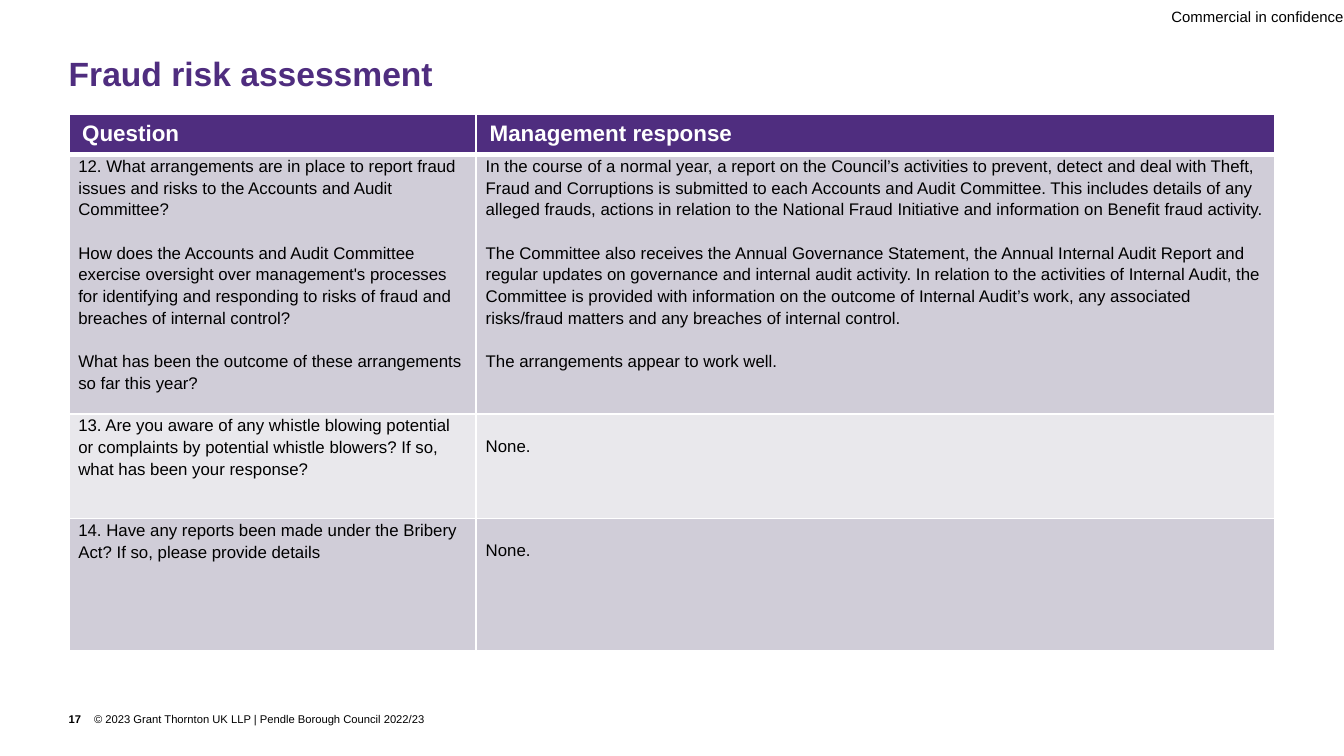
from lxml import etree
from pptx import Presentation
from pptx import util as u
from pptx.dml.color import RGBColor
from pptx.enum import text
from pptx.oxml import ns

PURPLE = RGBColor(0x4F, 0x2D, 0x7F)
MAUVE = RGBColor(0xD0, 0xCD, 0xD8)
PALE = RGBColor(0xE9, 0xE8, 0xEC)
WHITE = RGBColor(0xFF, 0xFF, 0xFF)
BLACK = RGBColor(0, 0, 0)

HEADINGS = ["Question", "Management response"]
# Each row: height in cm, question paragraphs, response paragraphs, top inset of the response
ROWS = [
    (4.9, [
        "12. What arrangements are in place to report fraud issues and risks to the Accounts and Audit Committee?",
        "How does the Accounts and Audit Committee exercise oversight over management's processes for "
        "identifying and responding to risks of fraud and breaches of internal control?",
        "What has been the outcome of these arrangements so far this year?",
    ], [
        "In the course of a normal year, a report on the Council’s activities to prevent, detect and deal with "
        "Theft, Fraud and Corruptions is submitted to each Accounts and Audit Committee. This includes details of "
        "any alleged frauds, actions in relation to the National Fraud Initiative and information on Benefit "
        "fraud activity.",
        "The Committee also receives the Annual Governance Statement, the Annual Internal Audit Report and "
        "regular updates on governance and internal audit activity. In relation to the activities of Internal "
        "Audit, the Committee is provided with information on the outcome of Internal Audit’s work, any "
        "associated risks/fraud matters and any breaches of internal control.",
        "The arrangements appear to work well.",
    ], 0),
    (1.98, [
        "13. Are you aware of any whistle blowing potential or complaints by potential whistle blowers? "
        "If so, what has been your response?",
    ], ["None."], 0.38),
    (2.5, [
        "14. Have any reports been made under the Bribery Act? If so, please provide details",
    ], ["None."], 0.38),
]


def write(frame, paragraphs, size=9, color=BLACK, bold=False, align=text.PP_ALIGN.LEFT,
          line=1.0, gap=0):
    """Fill a text frame, with a gap in points between its paragraphs."""
    frame.word_wrap = True
    for index, words in enumerate(paragraphs):
        para = frame.add_paragraph() if index else frame.paragraphs[0]
        para.alignment = align
        para.line_spacing = line
        if index:
            para.space_before = u.Pt(gap)
        span = para.add_run()
        span.text = words
        span.font.name = "Arial"
        span.font.size = u.Pt(size)
        span.font.bold = bold
        span.font.color.rgb = color


def set_insets(target, side, top):
    target.margin_left = target.margin_right = u.Cm(side)
    target.margin_top, target.margin_bottom = u.Cm(top), u.Cm(0)


def add_label(page, left, top, width, height, words, anchor=text.MSO_ANCHOR.TOP, **style):
    box = page.shapes.add_textbox(u.Cm(left), u.Cm(top), u.Cm(width), u.Cm(height))
    set_insets(box.text_frame, 0, 0)
    box.text_frame.vertical_anchor = anchor
    write(box.text_frame, [words], **style)


def paint_cell(cell, color, bottom=1):
    """White borders, then the fill, in the order the schema asks for."""
    properties = cell._tc.get_or_add_tcPr()
    for side, points in (("L", 1), ("R", 1), ("T", 1), ("B", bottom)):
        border = etree.SubElement(properties, ns.qn(f"a:ln{side}"), w=str(u.Pt(points)))
        fill = etree.SubElement(border, ns.qn("a:solidFill"))
        etree.SubElement(fill, ns.qn("a:srgbClr"), val=str(WHITE))
    cell.fill.solid()
    cell.fill.fore_color.rgb = color


def add_header(page, left, top, width, height):
    add_label(page, 21.44, 0, 3.96, 0.61, "Commercial in confidence",
              anchor=text.MSO_ANCHOR.MIDDLE, size=8, align=text.PP_ALIGN.RIGHT)
    add_label(page, left, top, width, height, "Fraud risk assessment",
              size=18, color=PURPLE, bold=True, line=0.9)


def add_questions(page, left, top, width):
    heights = [0.74] + [row[0] for row in ROWS]
    frame = page.shapes.add_table(len(heights), 2, u.Cm(left), u.Cm(top),
                                  u.Cm(width), u.Cm(sum(heights)))
    table = frame.table
    question_width = 7.7
    table.columns[0].width = u.Cm(question_width)
    table.columns[1].width = u.Cm(width - question_width)
    for row, height in zip(table.rows, heights):
        row.height = u.Cm(height)

    # Heading row
    for column, heading in enumerate(HEADINGS):
        cell = table.cell(0, column)
        paint_cell(cell, PURPLE, bottom=3)
        write(cell.text_frame, [heading], size=12, color=WHITE, bold=True)

    # Questions and responses
    for number, (_, question, response, inset) in enumerate(ROWS, 1):
        for column, (words, start) in enumerate([(question, 0), (response, inset)]):
            cell = table.cell(number, column)
            paint_cell(cell, MAUVE if number % 2 else PALE)
            set_insets(cell, 0.18, start)
            write(cell.text_frame, words, line=1.15, gap=11.6)


def add_footer(page, left, top, height):
    add_label(page, left, top, 0.46, height, "17", size=6, bold=True)
    add_label(page, left + 0.48, top, 10.95, height,
              "© 2023 Grant Thornton UK LLP | Pendle Borough Council 2022/23", size=6)


def main():
    deck = Presentation()
    deck.slide_width, deck.slide_height = u.Cm(25.4), u.Cm(14.29)
    page = deck.slides.add_slide(deck.slide_layouts[6])
    add_header(page, 1.3, 1.09, 22.8, 0.9)
    add_questions(page, 1.3, 2.16, 22.8)
    add_footer(page, 1.3, 13.46, 0.25)
    deck.save("out.pptx")


if __name__ == "__main__":
    main()
